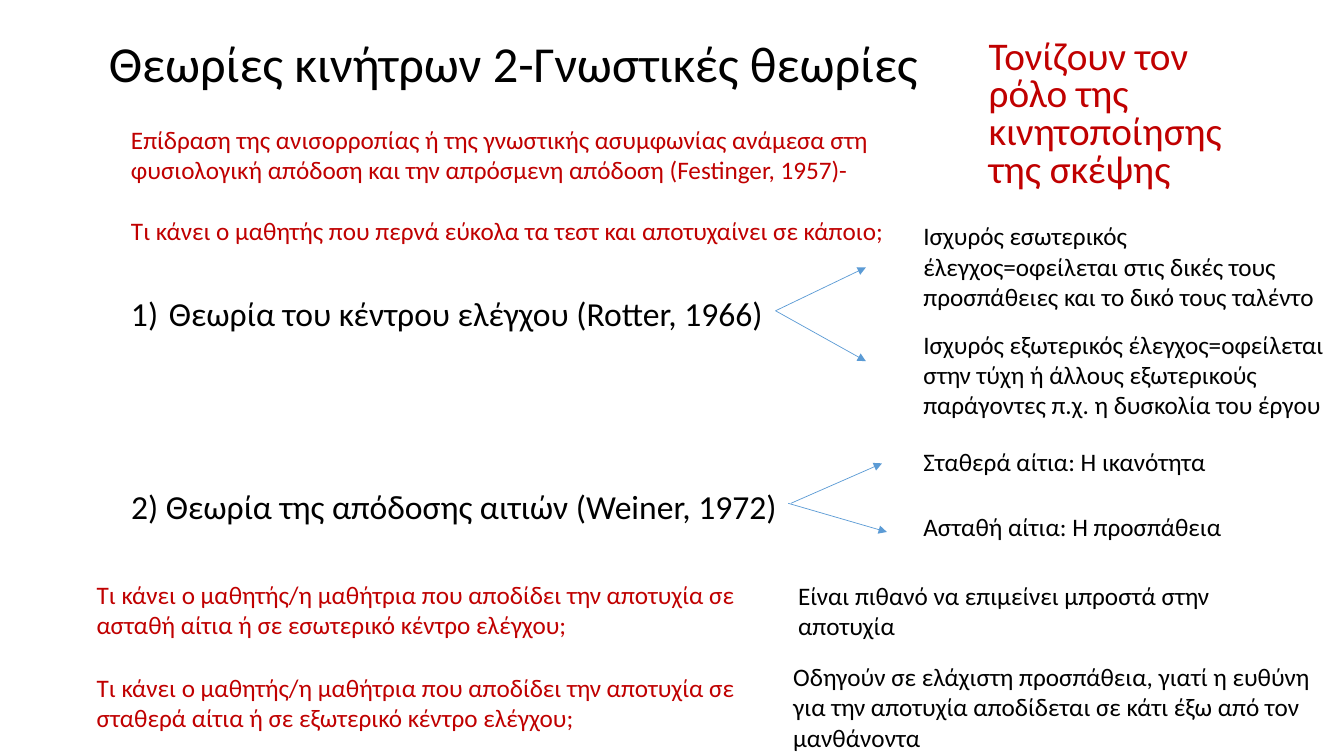
from lxml import etree
from pptx import Presentation, util as u
from pptx.dml.color import RGBColor
from pptx.enum import shapes, text
from pptx.oxml import ns

HUES = {"ink": "000000", "red": "C00000", "blue": "5B9BD5"}


class Page:
    """Holds the style and the current slide."""

    face = "Calibri"

    def __init__(self, deck):
        self.slide = deck.slides.add_slide(deck.slide_layouts[1])

    def place(self, shape, box):
        shape.left, shape.top, shape.width, shape.height = map(u.Pt, box)

    def fill(self, frame, lines, size, hue, gap=0, lead=1.0):
        frame.word_wrap = True
        for i, line in enumerate(lines):
            para = frame.paragraphs[0] if i == 0 else frame.add_paragraph()
            para.text = line
            para.alignment = text.PP_ALIGN.LEFT
            para.line_spacing = lead
            para.space_before = u.Pt(gap if i else 0)
            para.font.name = self.face
            para.font.size = u.Pt(size)
            para.font.color.rgb = RGBColor.from_string(HUES[hue])
        return frame.paragraphs[0]

    def title(self, box, line):
        shape = self.slide.shapes.title
        self.place(shape, box)
        frame = shape.text_frame
        self.fill(frame, [line], 36, "ink", lead=0.9)
        frame.auto_size = text.MSO_AUTO_SIZE.NONE
        frame.vertical_anchor = text.MSO_ANCHOR.MIDDLE

    def body(self, box, line):
        shape = self.slide.placeholders[1]
        self.place(shape, box)
        frame = shape.text_frame
        para = self.fill(frame, [line], 28, "red", lead=0.8)
        para.space_before = u.Pt(10)
        frame.auto_size = text.MSO_AUTO_SIZE.NONE
        self.mark(para, 0, "a:buNone")

    def note(self, box, *lines, size=18, hue="ink", gap=0):
        shape = self.slide.shapes.add_textbox(*map(u.Pt, box))
        frame = shape.text_frame
        para = self.fill(frame, lines, size, hue, gap)
        frame.auto_size = text.MSO_AUTO_SIZE.SHAPE_TO_FIT_TEXT
        return para

    def mark(self, para, dent, tag, **keys):
        """Set the hanging indent and the bullet of a paragraph."""
        props = para._p.get_or_add_pPr()
        props.set("marL", str(u.Pt(dent)))
        props.set("indent", str(u.Pt(-dent)))
        # The bullet goes before the default run properties
        bullet = etree.Element(ns.qn(tag), **keys)
        props.find(ns.qn("a:defRPr")).addprevious(bullet)

    def arrow(self, start, end):
        line = self.slide.shapes.add_connector(
            shapes.MSO_CONNECTOR.STRAIGHT, *map(u.Pt, start + end))
        line.line.color.rgb = RGBColor.from_string(HUES["blue"])
        line.line.width = u.Pt(0.5)
        props = line._element.spPr
        etree.SubElement(props.find(ns.qn("a:ln")), ns.qn("a:tailEnd"),
                         type="triangle")
        etree.SubElement(props, ns.qn("a:effectLst"))


def main():
    deck = Presentation()
    deck.slide_width, deck.slide_height = u.Pt(960), u.Pt(540)
    page = Page(deck)

    # Heading and side remark
    page.title((70.5, 10, 828, 75), "Θεωρίες κινήτρων 2-Γνωστικές θεωρίες")
    page.body((699, 25, 213, 128),
              "Τονίζουν τον ρόλο της κινητοποίησης της σκέψης")

    # Dissonance
    page.note((86.5, 85, 579, 94),
              "Επίδραση της ανισορροπίας ή της γνωστικής ασυμφωνίας ανάμεσα "
              "στη φυσιολογική απόδοση και την απρόσμενη απόδοση "
              "(Festinger, 1957)-",
              "Τι κάνει ο μαθητής που περνά εύκολα τα τεστ και αποτυχαίνει "
              "σε κάποιο;", hue="red", gap=22)

    # Two theories
    first = page.note((86.5, 206, 837, 36),
                      "Θεωρία του κέντρου ελέγχου (Rotter, 1966)", size=24)
    page.mark(first, 27, "a:buAutoNum", type="arabicParenR")
    page.note((86.5, 343.5, 600, 36),
              "2) Θεωρία της απόδοσης αιτιών (Weiner, 1972)", size=24)

    # Branches
    for start, end in (((554, 222), (618.5, 191)),
                       ((554, 222), (618.5, 258)),
                       ((565, 359.5), (630, 331)),
                       ((563, 359.5), (633.5, 380))):
        page.arrow(start, end)
    for top, wide, high, line in (
            (154, 297, 73, "Ισχυρός εσωτερικός έλεγχος=οφείλεται στις δικές "
                           "τους προσπάθειες και το δικό τους ταλέντο"),
            (231.5, 318, 73, "Ισχυρός εξωτερικός έλεγχος=οφείλεται στην τύχη "
                             "ή άλλους εξωτερικούς παράγοντες π.χ. "
                             "η δυσκολία του έργου"),
            (315, 271, 29, "Σταθερά αίτια: Η ικανότητα"),
            (362, 238, 29, "Ασταθή αίτια: Η προσπάθεια")):
        page.note((652.5, top, wide, high), line)

    # Questions
    ask = ("Τι κάνει ο μαθητής/η μαθήτρια που αποδίδει την αποτυχία σε "
           "{} κέντρο ελέγχου;")
    for top, cause in ((410, "ασταθή αίτια ή σε εσωτερικό"),
                       (476.5, "σταθερά αίτια ή σε εξωτερικό")):
        page.note((62, top, 490, 51), ask.format(cause), hue="red")

    # Answers
    page.note((563, 411, 346, 51),
              "Είναι πιθανό να επιμείνει μπροστά στην αποτυχία")
    page.note((559.5, 469, 390, 73),
              "Οδηγούν σε ελάχιστη προσπάθεια, γιατί η ευθύνη για την "
              "αποτυχία αποδίδεται σε κάτι έξω από τον μανθάνοντα")

    deck.save("out.pptx")


if __name__ == "__main__":
    main()
